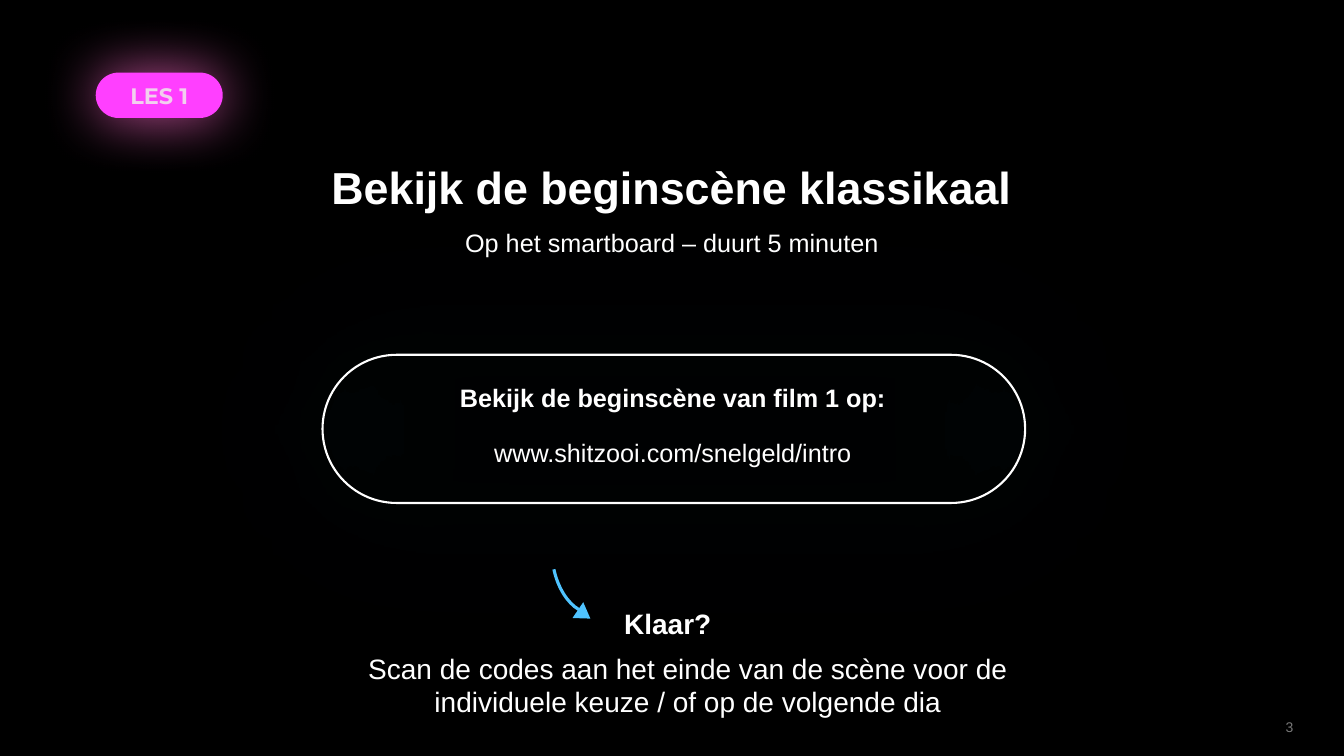
from lxml import etree
from pptx import Presentation
from pptx import util as u
from pptx.dml.color import RGBColor
from pptx.enum import shapes, text
from pptx.oxml import ns

COLUMNS, ROWS = 133.33, 75
WIDTH, HEIGHT = u.Inches(13.33), u.Inches(7.5)
WHITE, PINK, BLUE = "FFFFFF", "FF3FFF", "4FC3FF"


def colour(value):
    return RGBColor.from_string(value)


def grid(box):
    left, top, width, height = box
    return (round(left * WIDTH / COLUMNS), round(top * HEIGHT / ROWS),
            round(width * WIDTH / COLUMNS), round(height * HEIGHT / ROWS))


def inside(box, left, top, width, height):
    return box[0] + left, box[1] + top, width, height


def write(shape, words, size, value=WHITE, bold=False, font="Arial",
          align=text.PP_ALIGN.CENTER, anchor=text.MSO_ANCHOR.TOP):
    frame = shape.text_frame
    frame.text = words
    frame.word_wrap = True
    frame.auto_size = text.MSO_AUTO_SIZE.NONE
    frame.vertical_anchor = anchor
    paragraph = frame.paragraphs[0]
    paragraph.alignment = align
    paragraph.space_before = u.Pt(0)
    run_font = paragraph.runs[0].font
    run_font.name, run_font.size, run_font.bold = font, u.Pt(size), bold
    run_font.color.rgb = colour(value)


def add_label(slide, box, words, size, **style):
    write(slide.shapes.add_textbox(*grid(box)), words, size, **style)


def fill_placeholder(placeholder, box, words, size, **style):
    (placeholder.left, placeholder.top,
     placeholder.width, placeholder.height) = grid(box)
    write(placeholder, words, size, **style)


def add_figure(slide, kind, box, fill=None, line=None, weight=1.5):
    shape = slide.shapes.add_shape(kind, *grid(box))
    shape.shadow.inherit = False
    if fill:
        shape.fill.solid()
        shape.fill.fore_color.rgb = colour(fill)
    else:
        shape.fill.background()
    if line:
        shape.line.color.rgb = colour(line)
        shape.line.width = u.Pt(weight)
    else:
        shape.line.fill.background()
    return shape


def add_glowing_pill(slide, box, glow, blur, opacity, **style):
    pill = add_figure(slide, shapes.MSO_SHAPE.ROUNDED_RECTANGLE, box, **style)
    pill.adjustments[0] = 0.5
    effects = pill.element.spPr.find(ns.qn("a:effectLst"))
    shadow = etree.SubElement(effects, ns.qn("a:outerShdw"),
                              blurRad=str(u.Pt(blur)), algn="ctr", rotWithShape="0")
    tint = etree.SubElement(shadow, ns.qn("a:srgbClr"), val=glow)
    etree.SubElement(tint, ns.qn("a:alpha"), val=str(opacity * 1000))


def add_lesson_badge(slide, box):
    add_glowing_pill(slide, box, "C8539F", 42.4, 100, fill=PINK)
    add_label(slide, inside(box, -1.8, 0.5, 16.2, 3.6), "LES 1", 16,
              value="F2CFEE", bold=True, font="Montserrat")


def add_heading(slide, box):
    title, subtitle = slide.placeholders
    fill_placeholder(title, inside(box, 0, 0, 78.9, 6.4),
                     "Bekijk de beginscène klassikaal", 32, bold=True)
    fill_placeholder(subtitle, inside(box, 11.8, 6.8, 55.3, 4),
                     "Op het smartboard – duurt 5 minuten", 18)


def add_film_link(slide, box):
    add_glowing_pill(slide, box, "00CFFF", 88.6, 80, line=WHITE)
    add_label(slide, inside(box, 2.2, 7.7, 65.1, 5.3),
              "www.shitzooi.com/snelgeld/intro", 18)
    add_label(slide, inside(box, 7.1, 2.2, 55.3, 4),
              "Bekijk de beginscène van film 1 op:", 18, bold=True)


def add_curved_arrow(slide, box):
    arc = add_figure(slide, shapes.MSO_SHAPE.ARC, box, line=BLUE, weight=2.25)
    arc.adjustments[0], arc.adjustments[1] = 215.08, 43.59
    arc.rotation = 347.5
    arc.element.spPr.find(ns.qn("a:xfrm")).set("flipH", "1")
    head = add_figure(slide, shapes.MSO_SHAPE.ISOSCELES_TRIANGLE,
                      inside(box, 2.1, 9.3, 1.9, 1.5), fill=BLUE)
    head.rotation = 124.2


def add_next_step(slide, box):
    add_label(slide, inside(box, 0, 0, 78.9, 4.4), "Klaar?", 20, bold=True)
    add_label(slide, inside(box, 7.7, 4.4, 67.5, 7.7),
              "Scan de codes aan het einde van de scène voor de "
              "individuele keuze / of op de volgende dia", 20)
    add_curved_arrow(slide, inside(box, 28.1, -8.8, 6.1, 10))


def main():
    presentation = Presentation()
    presentation.slide_width, presentation.slide_height = WIDTH, HEIGHT
    slide = presentation.slides.add_slide(presentation.slide_layouts[0])
    slide.background.fill.solid()
    slide.background.fill.fore_color.rgb = colour("000000")
    add_lesson_badge(slide, (9.5, 7.2, 12.6, 4.5))
    add_heading(slide, (27.2, 15.3, 78.9, 10.8))
    add_film_link(slide, (32, 35.2, 69.7, 14.7))
    add_next_step(slide, (26.8, 59.7, 78.9, 12.1))
    add_label(slide, (99.3, 70.1, 30, 4), "3", 10, value="797979",
              align=text.PP_ALIGN.RIGHT, anchor=text.MSO_ANCHOR.MIDDLE)
    presentation.save("out.pptx")


if __name__ == "__main__":
    main()
